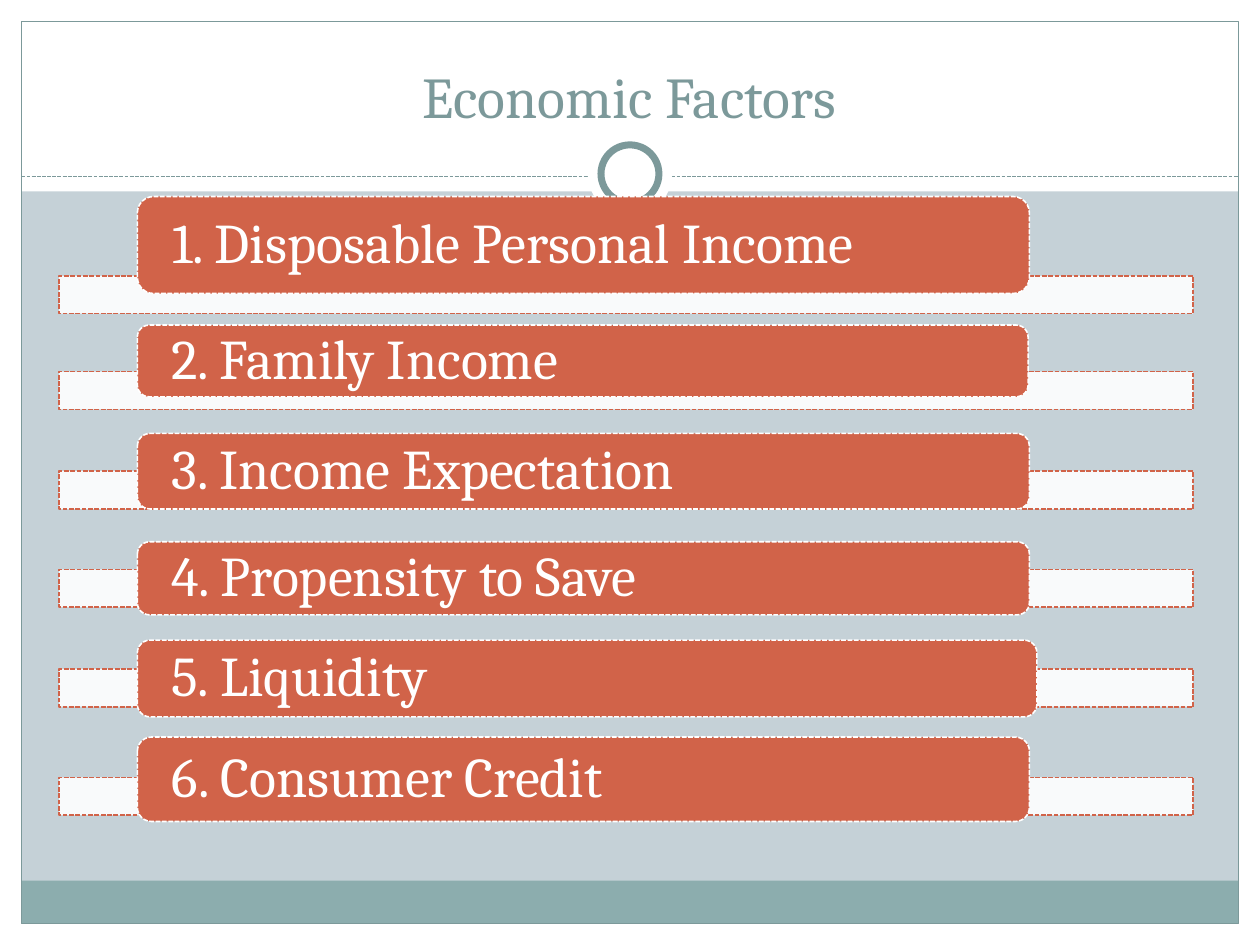
from lxml import etree
from pptx import Presentation
from pptx.dml.color import RGBColor
from pptx.enum.dml import MSO_LINE
from pptx.enum.shapes import MSO_CONNECTOR, MSO_SHAPE
from pptx.enum.text import MSO_ANCHOR, PP_ALIGN
from pptx.oxml.ns import qn
from pptx.util import Inches, Pt

RECT, ROUND, OVAL = MSO_SHAPE.RECTANGLE, MSO_SHAPE.ROUNDED_RECTANGLE, MSO_SHAPE.OVAL
DASH = MSO_LINE.SQUARE_DOT
WHITE = RGBColor(0xFF, 0xFF, 0xFF)
MIST = RGBColor(0xC5, 0xD1, 0xD7)
TEAL = RGBColor(0x8C, 0xAD, 0xAE)
SLATE = RGBColor(0x7C, 0x99, 0x9A)
RUST = RGBColor(0xD1, 0x63, 0x49)
FONT = "Cambria"

TITLE = "Economic Factors"
# text, bar top, label top, label width, label height
FACTORS = [
    ("1. Disposable Personal Income", 2.19, 1.56, 7.08, 0.77),
    ("2. Family Income", 2.95, 2.58, 7.07, 0.57),
    ("3. Income Expectation", 3.74, 3.44, 7.08, 0.60),
    ("4. Propensity to Save", 4.52, 4.30, 7.08, 0.58),
    ("5. Liquidity", 5.31, 5.08, 7.14, 0.61),
    ("6. Consumer Credit", 6.17, 5.85, 7.08, 0.67),
]
WIDE, HIGH, EDGE = 10, 7.5, 0.17
HEAD = 1.52
RULE = 1.4
RING = 1.38  # centre height of the ring


def draw(slide, kind, box, fill=None, line=None, width=0.75, dash=None):
    shape = slide.shapes.add_shape(kind, *map(Inches, box))
    shape.shadow.inherit = False
    if fill is None:
        shape.fill.background()
    else:
        shape.fill.solid()
        shape.fill.fore_color.rgb = fill
    if line is None:
        shape.line.fill.background()
    else:
        shape.line.color.rgb = line
        shape.line.width = Pt(width)
        shape.line.dash_style = dash
    return shape


def write(shape, text, size, color, align):
    shape.text_frame.text = text
    para = shape.text_frame.paragraphs[0]
    para.alignment = align
    font = para.runs[0].font
    font.name, font.size, font.color.rgb = FONT, Pt(size), color
    return para


def fade(shape, percent):
    """Set the opacity of a solid fill."""
    color = shape._element.spPr.find(qn("a:solidFill"))[0]
    etree.SubElement(color, qn("a:alpha")).set("val", str(percent * 1000))


def add_frame(slide):
    inner = WIDE - 2 * EDGE
    for box in [
        (0, HIGH - EDGE, WIDE, EDGE),
        (0, 0, WIDE, HEAD),
        (0, 0, EDGE, HIGH),
        (WIDE - EDGE, 0, EDGE, HIGH),
    ]:
        draw(slide, RECT, box, WHITE)
    draw(slide, RECT, (EDGE, 6.99, inner, 0.34), TEAL)
    draw(slide, RECT, (EDGE, EDGE, inner, HIGH - 2 * EDGE), line=SLATE)

    rule = slide.shapes.add_connector(
        MSO_CONNECTOR.STRAIGHT,
        Inches(EDGE), Inches(RULE), Inches(WIDE - EDGE), Inches(RULE),
    )
    rule.line.color.rgb = SLATE
    rule.line.width = Pt(0.75)
    rule.line.dash_style = DASH
    etree.SubElement(rule._element.spPr, qn("a:effectLst"))

    for size, line in [(0.67, None), (0.46, SLATE)]:
        box = ((WIDE - size) / 2, RING - size / 2, size, size)
        draw(slide, OVAL, box, WHITE, line, 4)


def add_title(slide):
    title = slide.shapes.title
    title.left, title.top = Inches(0.33), Inches(0.25)
    title.width, title.height = Inches(9.33), Inches(0.83)
    title.text_frame.vertical_anchor = MSO_ANCHOR.BOTTOM
    write(title, TITLE, 33, SLATE, PP_ALIGN.CENTER)
    slide.shapes._spTree.append(title._element)  # in front of the header


def add_factor(slide, text, bar_top, top, width, height):
    bar = draw(slide, RECT, (0.47, bar_top, 9, 0.3), WHITE, RUST, 0.9, DASH)
    fade(bar, 90)
    label = draw(slide, ROUND, (1.09, top, width, height), RUST, WHITE, 0.9, DASH)
    frame = label.text_frame
    frame.word_wrap = True
    frame.vertical_anchor = MSO_ANCHOR.MIDDLE
    frame.margin_left = frame.margin_right = Inches(0.24)
    frame.margin_top = frame.margin_bottom = 0
    para = write(label, text, 32, WHITE, PP_ALIGN.LEFT)
    para.line_spacing = 0.9


def main():
    deck = Presentation()
    deck.slide_width, deck.slide_height = Inches(WIDE), Inches(HIGH)
    slide = deck.slides.add_slide(deck.slide_layouts[5])
    slide.background.fill.solid()
    slide.background.fill.fore_color.rgb = MIST
    add_frame(slide)
    add_title(slide)
    for factor in FACTORS:
        add_factor(slide, *factor)
    deck.save("out.pptx")


if __name__ == "__main__":
    main()
